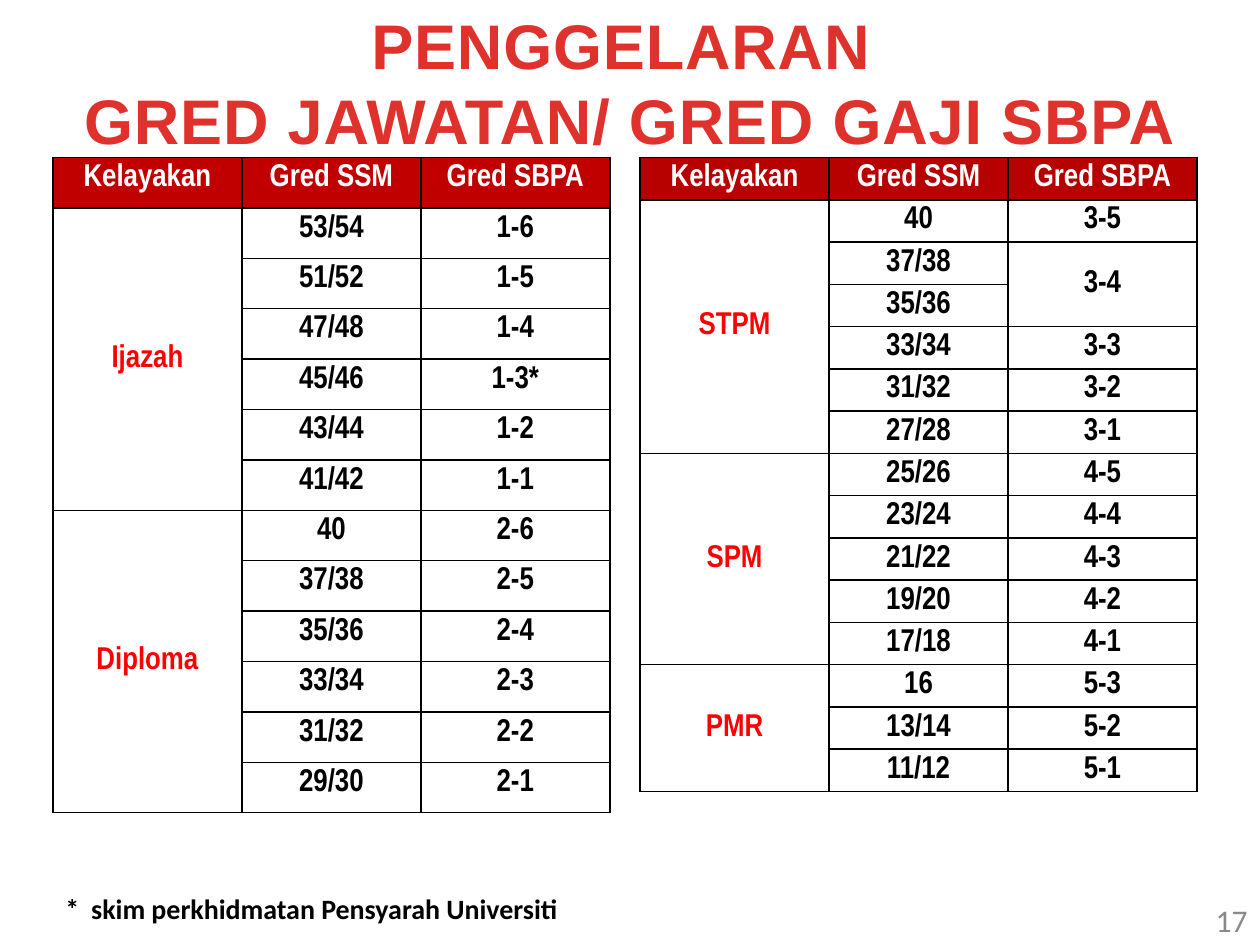
from dataclasses import dataclass
from typing import Optional

from lxml.etree import SubElement
from pptx import Presentation
from pptx.dml.color import RGBColor
from pptx.enum.text import MSO_ANCHOR as Anchor, MSO_AUTO_SIZE as AutoSize, PP_ALIGN as Align
from pptx.oxml.ns import qn
from pptx.util import Pt

WHITE = RGBColor(0xFF, 0xFF, 0xFF)
BLACK = RGBColor(0, 0, 0)
RED = RGBColor(0xFF, 0, 0)
HEADER_LEFT = RGBColor(0xC0, 0, 0)
HEADER_RIGHT = RGBColor(0xB7, 0, 0)
TITLE_TOP = RGBColor(0xE0, 0x32, 0x2D)
TITLE_BOTTOM = RGBColor(0xA2, 0x20, 0x1C)
GREY = RGBColor(0x89, 0x89, 0x89)

HEADINGS = ("Kelayakan", "Gred SSM", "Gred SBPA")
COL_WIDTHS = (108, 102.24, 108)
TABLE_TOP = 90


@dataclass
class Group:
    """One qualification; a None grade continues the cell above it."""
    name: str
    ssm: list[str]
    sbpa: list[Optional[str]]


@dataclass
class GradeTable:
    left: float
    height: float
    row_height: float
    header: RGBColor
    groups: list[Group]


TABLES = [
    GradeTable(30.24, 374.4, 28.8, HEADER_LEFT, [
        Group("Ijazah", ["53/54", "51/52", "47/48", "45/46", "43/44", "41/42"],
              ["1-6", "1-5", "1-4", "1-3*", "1-2", "1-1"]),
        Group("Diploma", ["40", "37/38", "35/36", "33/34", "31/32", "29/30"],
              ["2-6", "2-5", "2-4", "2-3", "2-2", "2-1"]),
    ]),
    GradeTable(365.76, 432, 23.04, HEADER_RIGHT, [
        Group("STPM", ["40", "37/38", "35/36", "33/34", "31/32", "27/28"],
              ["3-5", "3-4", None, "3-3", "3-2", "3-1"]),
        Group("SPM", ["25/26", "23/24", "21/22", "19/20", "17/18"],
              ["4-5", "4-4", "4-3", "4-2", "4-1"]),
        Group("PMR", ["16", "13/14", "11/12"], ["5-3", "5-2", "5-1"]),
    ]),
]


def add_text(p, text: str, *, size: float, font: str, color: RGBColor,
             bold: bool = False, align: Align = Align.LEFT, space: float = 0):
    p.alignment = align
    p.space_before = p.space_after = Pt(space)
    r = p.add_run()
    r.text = text
    r.font.size, r.font.name, r.font.bold = Pt(size), font, bold
    r.font.color.rgb = color
    return r


def add_box(s, left: float, top: float, width: float, height: float):
    tf = s.shapes.add_textbox(Pt(left), Pt(top), Pt(width), Pt(height)).text_frame
    tf.word_wrap = True
    return tf


def add_borders(cell) -> None:
    tc_pr = cell._tc.get_or_add_tcPr()
    for side in ("a:lnL", "a:lnR", "a:lnT", "a:lnB"):
        ln = SubElement(tc_pr, qn(side), w=str(Pt(1)))
        fill = SubElement(ln, qn("a:solidFill"))
        SubElement(fill, qn("a:srgbClr"), val=str(BLACK))


def draw_table(s, spec: GradeTable) -> None:
    rows = [HEADINGS]
    for group in spec.groups:
        names = [group.name] + [None] * (len(group.ssm) - 1)
        rows += zip(names, group.ssm, group.sbpa)

    frame = s.shapes.add_table(len(rows), len(HEADINGS), Pt(spec.left), Pt(TABLE_TOP),
                               Pt(sum(COL_WIDTHS)), Pt(spec.height))
    table = frame.table
    for column, width in zip(table.columns, COL_WIDTHS):
        column.width = Pt(width)
    for row in table.rows:
        row.height = Pt(spec.row_height)
    frame.height = Pt(spec.height)

    for i, values in enumerate(rows):
        for j, text in enumerate(values):
            cell = table.cell(i, j)
            add_borders(cell)
            cell.fill.solid()
            cell.fill.fore_color.rgb = WHITE if i else spec.header
            if text is None:
                continue
            end = i
            while end + 1 < len(rows) and rows[end + 1][j] is None:
                end += 1
            if end > i:
                cell.merge(table.cell(end, j))
                cell.vertical_anchor = Anchor.MIDDLE
            color = WHITE if i == 0 else RED if j == 0 else BLACK
            add_text(cell.text_frame.paragraphs[0], text, size=18, font="Arial Narrow",
                     color=color, bold=True, align=Align.CENTER, space=3)


def draw_title(s) -> None:
    tf = add_box(s, 0, 0, 720, 94.32)
    tf.auto_size = AutoSize.SHAPE_TO_FIT_TEXT
    for i, line in enumerate(("PENGGELARAN ", "GRED JAWATAN/ GRED GAJI SBPA")):
        p = tf.add_paragraph() if i else tf.paragraphs[0]
        r = add_text(p, line, size=36, font="Arial", color=TITLE_TOP,
                     bold=True, align=Align.CENTER)
        fill = r.font.fill
        fill.gradient()
        fill.gradient_angle = 270
        stops = ((0.25, TITLE_TOP), (1, TITLE_BOTTOM))
        for stop, (position, color) in zip(fill.gradient_stops, stops):
            stop.position, stop.color.rgb = position, color
        r._r.get_or_add_rPr().set("spc", "50")


def draw_footnote(s) -> None:
    tf = add_box(s, 30.24, 486, 311.76, 48.24)
    tf.margin_top = Pt(23.6)
    p = tf.paragraphs[0]
    add_text(p, "*\tskim perkhidmatan Pensyarah Universiti", size=16,
             font="Calibri", color=BLACK, bold=True)
    hanging = Pt(14.8)
    p_pr = p._p.get_or_add_pPr()
    p_pr.set("marL", str(hanging))
    p_pr.set("indent", str(-hanging))


def draw_page_number(s) -> None:
    tf = add_box(s, 552.24, 511.2, 167.76, 28.8)
    tf.vertical_anchor = Anchor.MIDDLE
    add_text(tf.paragraphs[0], "17", size=18, font="Calibri", color=GREY, align=Align.RIGHT)


def main() -> None:
    prs = Presentation()
    prs.slide_width, prs.slide_height = Pt(720), Pt(540)
    s = prs.slides.add_slide(prs.slide_layouts[6])
    for spec in TABLES:
        draw_table(s, spec)
    draw_footnote(s)
    draw_title(s)
    draw_page_number(s)
    prs.save("out.pptx")


if __name__ == "__main__":
    main()
